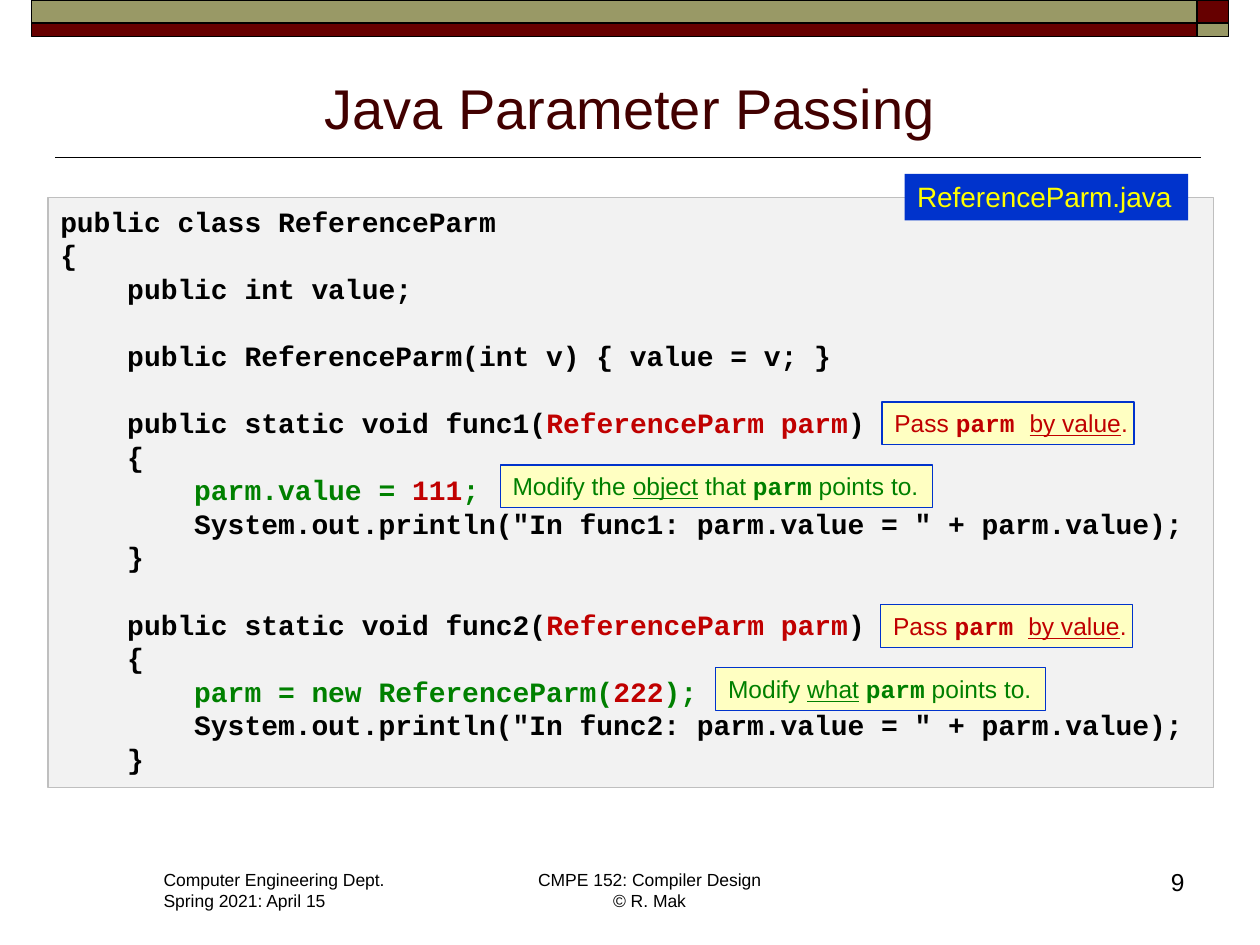
from dataclasses import dataclass

from lxml import etree
from pptx import Presentation
from pptx.dml.color import RGBColor
from pptx.enum import shapes, text
from pptx.oxml import ns
from pptx.util import Inches, Pt


@dataclass(frozen=True)
class Theme:
    sans: str = "Arial"
    mono: str = "Courier New"
    maroon: str = "660000"
    olive: str = "999966"
    title: str = "420000"
    ink: str = "000000"
    panel: str = "F2F2F2"
    panel_edge: str = "BFBFBF"
    note: str = "FFFFC2"
    blue: str = "0033CC"
    yellow: str = "FFFF00"
    red: str = "C00000"
    green: str = "008000"
    title_size: int = 32
    code_size: int = 16
    note_size: int = 14
    footer_size: int = 10
    code_pitch: float = 19.2


THEME = Theme()


def write(paragraph, words, font=THEME.sans, size=THEME.note_size,
          color=THEME.ink, bold=False, underline=False):
    run = paragraph.add_run()
    run.text = words
    run.font.name = font
    run.font.size = Pt(size)
    run.font.color.rgb = RGBColor.from_string(color)
    run.font.bold = bold
    run.font.underline = underline


class SlideBuilder:
    def __init__(self, theme, slide):
        self.theme = theme
        self.slide = slide

    def prepare(self, frame, wrap=False, anchor=text.MSO_ANCHOR.TOP):
        frame.word_wrap = wrap
        frame.vertical_anchor = anchor
        frame.margin_left = frame.margin_right = Inches(0.1)
        frame.margin_top = frame.margin_bottom = Inches(0.05)
        return frame.paragraphs[0]

    def title(self, words, left, top, width, height):
        heading = self.slide.shapes.title
        heading.left, heading.top = Inches(left), Inches(top)
        heading.width, heading.height = Inches(width), Inches(height)
        paragraph = self.prepare(heading.text_frame, True, text.MSO_ANCHOR.BOTTOM)
        paragraph.alignment = text.PP_ALIGN.CENTER
        write(paragraph, words, size=self.theme.title_size, color=self.theme.title)

    def rule(self, start, end, y):
        line = self.slide.shapes.add_connector(
            shapes.MSO_CONNECTOR.STRAIGHT, Inches(start), Inches(y), Inches(end), Inches(y))
        line.line.color.rgb = RGBColor.from_string(self.theme.ink)
        line.line.width = Pt(1)
        etree.SubElement(line._element.spPr, ns.qn("a:effectLst"))

    def box(self, left, top, width, height, fill, edge=None, weight=0.75):
        rectangle = self.slide.shapes.add_shape(
            shapes.MSO_SHAPE.RECTANGLE, Inches(left), Inches(top), Inches(width), Inches(height))
        rectangle.shadow.inherit = False
        rectangle.fill.solid()
        rectangle.fill.fore_color.rgb = RGBColor.from_string(fill)
        if edge:
            rectangle.line.color.rgb = RGBColor.from_string(edge)
            rectangle.line.width = Pt(weight)
        else:
            rectangle.line.fill.background()
        return rectangle

    def label(self, left, top, width, height, spans, fill, edge=None):
        card = self.box(left, top, width, height, fill, edge)
        paragraph = self.prepare(card.text_frame)
        paragraph.alignment = text.PP_ALIGN.LEFT
        for words, style in spans:
            write(paragraph, words, **style)

    def caption(self, left, top, width, height, lines, size, align, wrap=False):
        area = self.slide.shapes.add_textbox(
            Inches(left), Inches(top), Inches(width), Inches(height))
        paragraph = self.prepare(area.text_frame, wrap)
        paragraph.alignment = align
        for index, words in enumerate(lines):
            if index:
                paragraph.add_line_break()
            write(paragraph, words, size=size)

    def code(self, left, top, width, height, blocks):
        theme = self.theme
        frame = self.box(left, top, width, height, theme.panel, theme.panel_edge).text_frame
        paragraph = self.prepare(frame)
        for block_index, block in enumerate(blocks):
            for line_index, spans in enumerate(block):
                if block_index or line_index:
                    paragraph = frame.add_paragraph()
                if block_index and not line_index:
                    paragraph.space_before = Pt(theme.code_pitch)
                paragraph.alignment = text.PP_ALIGN.LEFT
                paragraph.line_spacing = Pt(theme.code_pitch)
                for words, color in spans:
                    write(paragraph, words, font=theme.mono, size=theme.code_size,
                          color=color, bold=True)


def method(name, statement):
    ink = THEME.ink
    return [
        [(f"    public static void {name}(", ink), ("ReferenceParm parm", THEME.red), (")", ink)],
        [("    {", ink)],
        statement,
        [(f'        System.out.println("In {name}: parm.value = " + parm.value);', ink)],
        [("    }", ink)],
    ]


def main():
    deck = Presentation()
    deck.slide_width, deck.slide_height = Inches(10), Inches(7.5)
    theme = THEME
    builder = SlideBuilder(theme, deck.slides.add_slide(deck.slide_layouts[5]))

    builder.rule(9.53, 0.44, 1.25)
    for left, width, colors in ((9.5, 0.25, (theme.maroon, theme.olive)),
                                (0.25, 9.25, (theme.olive, theme.maroon))):
        for top, height, color in zip((0, 0.18), (0.18, 0.11), colors):
            builder.box(left, top, width, height, color, theme.ink, 1)

    builder.title("Java Parameter Passing", 0.5, 0.45, 9, 0.72)

    align = text.PP_ALIGN
    builder.caption(1.2, 6.85, 1.97, 0.44,
                    ["Computer Engineering Dept.", "Spring 2021: April 15"],
                    theme.footer_size, align.LEFT)
    builder.caption(4.16, 6.85, 1.99, 0.44, ["CMPE 152: Compiler Design", "© R. Mak"],
                    theme.footer_size, align.CENTER)
    builder.caption(8.8, 6.83, 0.7, 0.5, ["9"], theme.note_size, align.RIGHT, True)

    change_object = [("        parm.value = ", theme.green), ("111", theme.red), (";", theme.green)]
    change_reference = [("        parm = new ReferenceParm(", theme.green),
                        ("222", theme.red), (");", theme.green)]
    opening = ["public class ReferenceParm", "{", "    public int value;"]
    builder.code(0.38, 1.57, 9.25, 4.68, [
        [[(line, theme.ink)] for line in opening],
        [[("    public ReferenceParm(int v) { value = v; }", theme.ink)]],
        method("func1", change_object),
        method("func2", change_reference),
    ])

    red, green = {"color": theme.red}, {"color": theme.green}
    underlined = {"underline": True}
    mono = {"font": theme.mono, "bold": True}
    by_value = [("Pass ", red), ("parm ", red | mono), ("by value", red | underlined), (".", red)]
    parm_points = [("parm", green | mono), (" points to.", green)]
    modify_object = [("Modify the ", green), ("object", green | underlined),
                     (" that ", green), *parm_points]
    modify_what = [("Modify ", green), ("what", green | underlined), (" ", green), *parm_points]
    for left, top, width, spans in ((7, 3.19, 2, by_value), (3.97, 3.69, 3.43, modify_object),
                                    (6.99, 4.8, 2, by_value), (5.68, 5.3, 2.62, modify_what)):
        builder.label(left, top, width, 0.34, spans, theme.note, theme.blue)

    file_name = [("ReferenceParm.java", {"size": theme.code_size, "color": theme.yellow})]
    builder.label(7.18, 1.38, 2.25, 0.37, file_name, theme.blue)

    deck.save("out.pptx")


if __name__ == "__main__":
    main()
